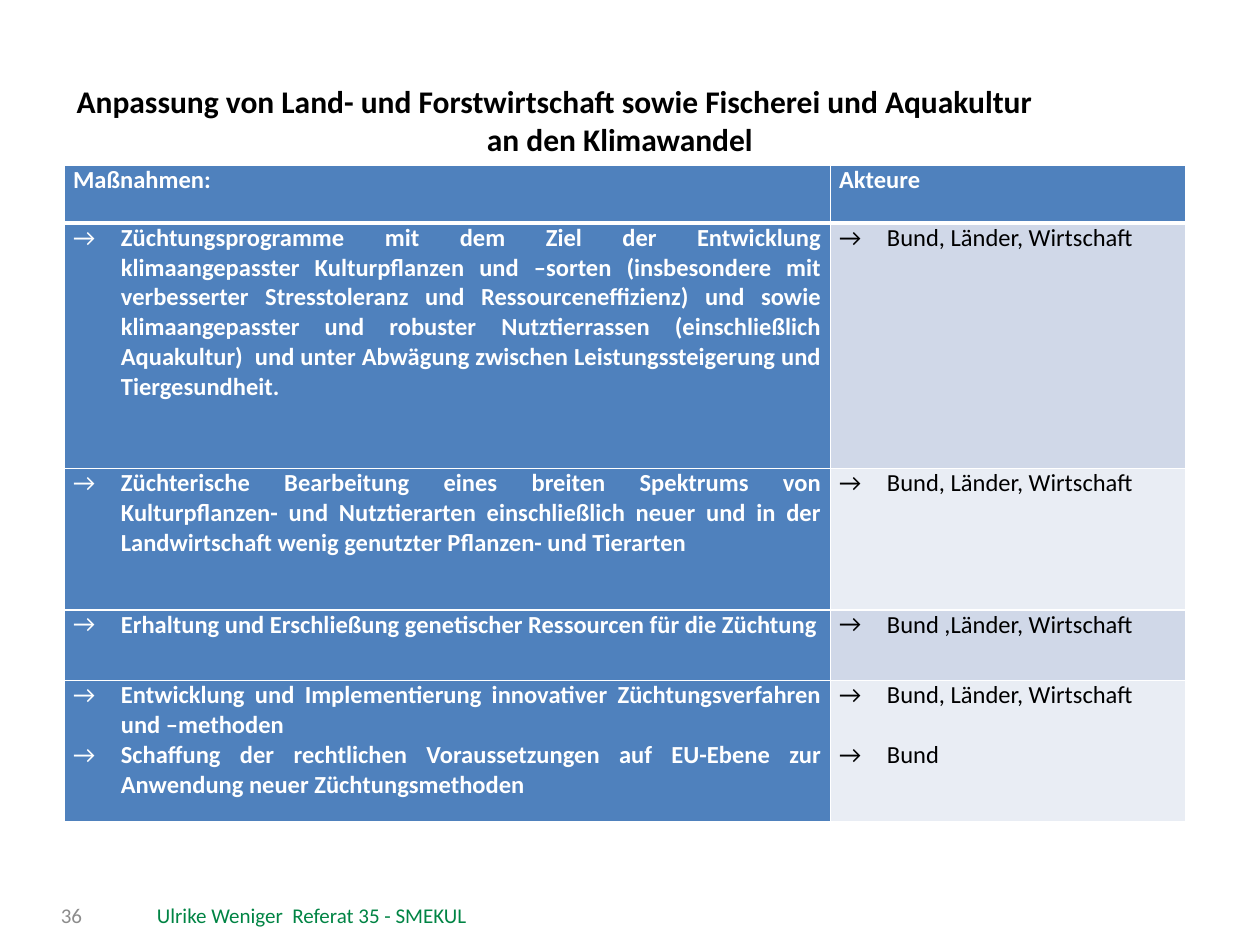
from dataclasses import dataclass

from lxml import etree
from pptx import Presentation, util as u
from pptx.dml.color import RGBColor
from pptx.enum import text
from pptx.oxml import ns
from pptx.table import _Cell as Cell
from pptx.text.text import _Paragraph as Para

INK = {
    "white": "FFFFFF", "black": "000000", "blue": "4F81BD",
    "dark": "D0D8E8", "light": "E9EDF4", "green": "008444", "grey": "8C8C8C",
}
AL = text.PP_ALIGN


@dataclass
class Item:
    words: str
    after: float = 0
    before: float = 0


@dataclass
class Row:
    height: float
    steps: list[Item]
    actors: list[Item]


@dataclass
class Label:
    box: tuple[float, float, float, float]
    lines: list[tuple[str, AL]]
    size: float
    ink: str
    bold: bool = False
    anchor: text.MSO_ANCHOR = text.MSO_ANCHOR.MIDDLE


ROWS = [
    Row(1.95, [Item(
        "Züchtungsprogramme mit dem Ziel der Entwicklung klimaangepasster "
        "Kulturpflanzen und –sorten (insbesondere mit verbesserter "
        "Stresstoleranz und Ressourceneffizienz) und sowie klimaangepasster "
        "und robuster Nutztierrassen (einschließlich Aquakultur)  und unter "
        "Abwägung zwischen Leistungssteigerung und Tiergesundheit.", 13)],
        [Item("Bund, Länder, Wirtschaft")]),
    Row(1.12, [Item(
        "Züchterische Bearbeitung eines breiten Spektrums von "
        "Kulturpflanzen- und Nutztierarten einschließlich neuer und in der "
        "Landwirtschaft wenig genutzter Pflanzen- und Tierarten", 13)],
        [Item("Bund, Länder, Wirtschaft")]),
    Row(0.56, [Item(
        "Erhaltung und Erschließung genetischer Ressourcen für die Züchtung")],
        [Item("Bund ,Länder, Wirtschaft")]),
    Row(1.12, [
        Item("Entwicklung und Implementierung innovativer "
             "Züchtungsverfahren und –methoden"),
        Item("Schaffung der rechtlichen Voraussetzungen auf EU-Ebene zur "
             "Anwendung neuer Züchtungsmethoden")],
        [Item("Bund, Länder, Wirtschaft"), Item("Bund", before=17)]),
]

LABELS = [
    Label((0.89, 7.06, 3.17, 0.4),
          [("Ulrike Weniger  Referat 35 - SMEKUL", AL.CENTER)], 12, "green"),
    Label((0.07, 7.06, 0.68, 0.4), [("36", AL.RIGHT)], 12, "grey"),
    Label((0.51, 0.6, 8.82, 0.71),
          [("Anpassung von Land- und Forstwirtschaft sowie Fischerei und "
            "Aquakultur", AL.LEFT), ("an den Klimawandel", AL.CENTER)],
          18, "black", True, text.MSO_ANCHOR.TOP),
]


def style(para: Para, size: float, ink: str, bold: bool) -> None:
    font = para.font
    font.name, font.size, font.bold = "Calibri", u.Pt(size), bold
    font.color.rgb = RGBColor.from_string(INK[ink])


def add_arrow(para: Para) -> None:
    """Give the paragraph a hanging arrow bullet."""
    props = para._p.get_or_add_pPr()
    props.set("marL", str(u.Inches(0.38)))
    props.set("indent", str(u.Inches(-0.38)))
    etree.SubElement(props, ns.qn("a:buFont"), typeface="Calibri")
    etree.SubElement(props, ns.qn("a:buChar"), char="→")


def add_edges(cell: Cell, base: float) -> None:
    """Draw white cell borders; base is the width of the bottom one."""
    props = cell._tc.get_or_add_tcPr()
    for side, width in (("L", 1), ("R", 1), ("T", 1), ("B", base)):
        line = etree.SubElement(props, ns.qn(f"a:ln{side}"), w=str(u.Pt(width)))
        fill = etree.SubElement(line, ns.qn("a:solidFill"))
        etree.SubElement(fill, ns.qn("a:srgbClr"), val=INK["white"])


def fill_cell(cell: Cell, items: list[Item], back: str, ink: str, bold: bool,
              arrow: bool = True, base: float = 1) -> None:
    cell.margin_left = cell.margin_right = u.Inches(0.07)
    cell.margin_top = cell.margin_bottom = 0
    add_edges(cell, base)
    cell.fill.solid()
    cell.fill.fore_color.rgb = RGBColor.from_string(INK[back])
    frame = cell.text_frame
    for i, item in enumerate(items):
        para = frame.add_paragraph() if i else frame.paragraphs[0]
        para.text = item.words
        para.alignment = AL.JUSTIFY
        if arrow:
            add_arrow(para)
        if item.before:
            para.space_before = u.Pt(item.before)
        if item.after:
            para.space_after = u.Pt(item.after)
        style(para, 14, ink, bold)


def add_label(slide, label: Label) -> None:
    frame = slide.shapes.add_textbox(*map(u.Inches, label.box)).text_frame
    frame.word_wrap = True
    frame.vertical_anchor = label.anchor
    for i, (words, align) in enumerate(label.lines):
        para = frame.add_paragraph() if i else frame.paragraphs[0]
        para.text, para.alignment = words, align
        style(para, label.size, label.ink, label.bold)


def add_plan(slide) -> None:
    """Add the table of measures and the bodies in charge."""
    table = slide.shapes.add_table(
        len(ROWS) + 1, 2, *map(u.Inches, (0.51, 1.31, 8.9, 5.2))).table
    table.horz_banding = False
    for col, width in zip(table.columns, (6.08, 2.82)):
        col.width = u.Inches(width)
    table.rows[0].height = u.Inches(0.46)
    for i, head in enumerate(("Maßnahmen:", "Akteure")):
        fill_cell(table.cell(0, i), [Item(head)], "blue", "white", True,
                  arrow=False, base=3)
    for i, row in enumerate(ROWS, 1):
        table.rows[i].height = u.Inches(row.height)
        fill_cell(table.cell(i, 0), row.steps, "blue", "white", True)
        fill_cell(table.cell(i, 1), row.actors,
                  "dark" if i % 2 else "light", "black", False)


def main() -> None:
    deck = Presentation()
    deck.slide_width, deck.slide_height = u.Inches(10), u.Inches(7.5)
    slide = deck.slides.add_slide(deck.slide_layouts[6])
    add_plan(slide)
    for label in LABELS:
        add_label(slide, label)
    deck.save("out.pptx")


if __name__ == "__main__":
    main()
